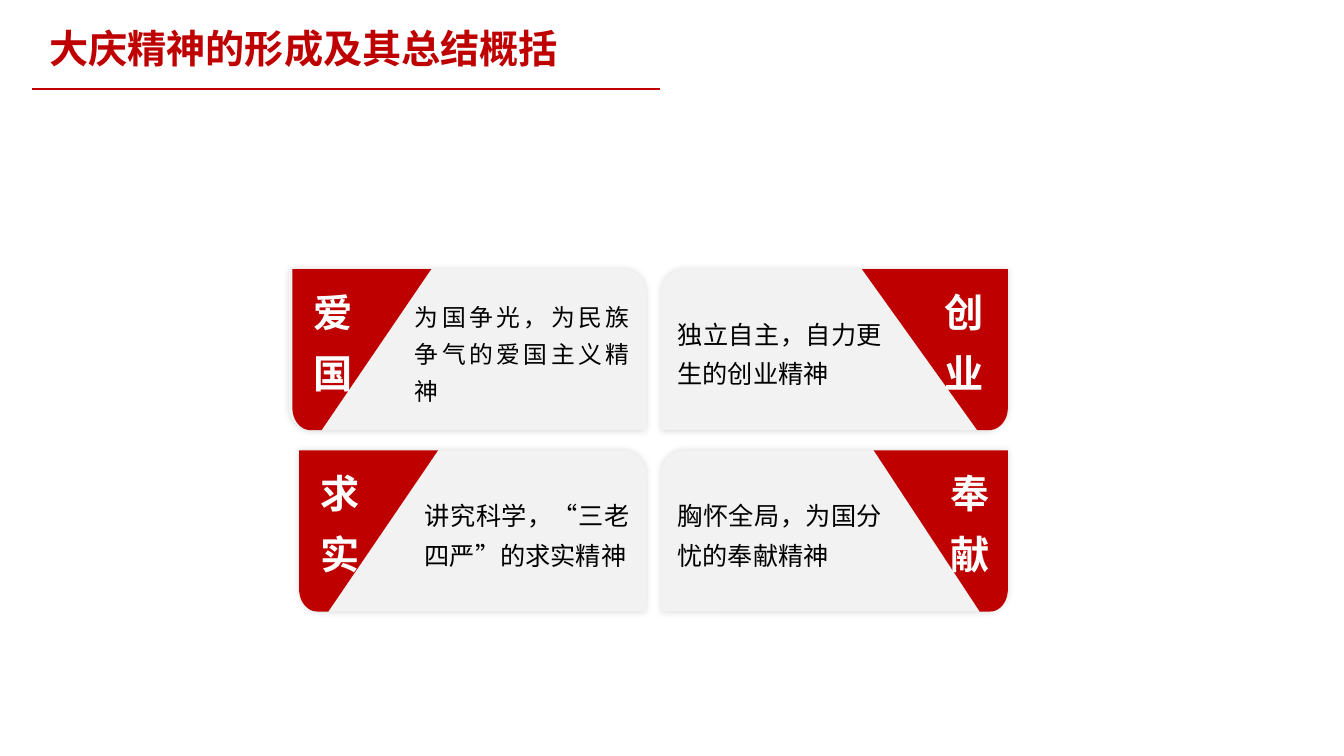
import math

from lxml import etree
from pptx import Presentation
from pptx import util as u
from pptx.dml.color import RGBColor
from pptx.enum import shapes, text
from pptx.oxml import ns

RED = RGBColor(0xBF, 0x00, 0x00)
GREY = RGBColor(0xF2, 0xF2, 0xF2)
WHITE = RGBColor(0xFF, 0xFF, 0xFF)
BLACK = RGBColor(0x00, 0x00, 0x00)
SHADOW = RGBColor(0x97, 0x9A, 0x9C)
FONT = "Noto Sans CJK SC"

ROW_TOPS = (6.78, 11.35)
CARD_HEIGHT = 4.06
LEFT_CARD_END, RIGHT_CARD_START, RIGHT_CARD_END = 16.28, 16.66, 25.4
SIDE_MARGIN, WIDE_CARD_MARGIN, WIDE_FLAG_MARGIN = 0.25, 3.0, 1.7


def add_xml(parent, tag, **attributes):
    return etree.SubElement(parent, ns.qn(tag), attributes)


def write_text(shape, words, size, color, bold=False, alignment=None,
               spacing=None, anchor=text.MSO_ANCHOR.TOP,
               left=SIDE_MARGIN, right=SIDE_MARGIN):
    frame = shape.text_frame
    frame.text = words
    frame.word_wrap = True
    frame.vertical_anchor = anchor
    frame.margin_left, frame.margin_right = u.Cm(left), u.Cm(right)
    frame.margin_top = frame.margin_bottom = u.Cm(0.13)
    paragraph = frame.paragraphs[0]
    paragraph.alignment = alignment
    paragraph.line_spacing = spacing
    run = paragraph.runs[0]
    run.font.name = FONT
    run.font.size = u.Pt(size)
    run.font.bold = bold
    run.font.color.rgb = color
    add_xml(run.font._element, "a:ea", typeface=FONT)


def fill_plain(shape, color):
    shape.shadow.inherit = False
    shape.fill.solid()
    shape.fill.fore_color.rgb = color
    shape.line.fill.background()


def add_soft_shadow(shape):
    effects = shape._element.spPr.find(ns.qn("a:effectLst"))
    shadow = add_xml(effects, "a:outerShdw", blurRad=str(u.Pt(5)),
                     dist="0", dir="0", algn="ctr", rotWithShape="0")
    color = add_xml(shadow, "a:srgbClr", val=str(SHADOW))
    add_xml(color, "a:alpha", val="40000")


def add_title(slide, words):
    title = slide.shapes.title
    title.left, title.top = u.Cm(0.99), u.Cm(0.48)
    title.width, title.height = u.Cm(13.41), u.Cm(1.45)
    write_text(title, words, 28, RED, bold=True,
               alignment=text.PP_ALIGN.LEFT)
    title.text_frame.word_wrap = False
    title.text_frame.auto_size = text.MSO_AUTO_SIZE.SHAPE_TO_FIT_TEXT


def add_title_rule(slide):
    rule = slide.shapes.add_connector(
        shapes.MSO_CONNECTOR.STRAIGHT,
        u.Cm(0.81), u.Cm(2.24), u.Cm(16.64), u.Cm(2.24))
    rule.line.color.rgb = RED
    rule.line.width = u.Pt(1.5)
    add_xml(rule._element.spPr, "a:effectLst")


def add_card(slide, start, end, top, words, size, on_left):
    card = slide.shapes.add_shape(
        shapes.MSO_SHAPE.ROUND_2_DIAG_RECTANGLE,
        u.Cm(start), u.Cm(top), u.Cm(end - start), u.Cm(CARD_HEIGHT))
    corners = (0, 0.14) if on_left else (0.14, 0)
    card.adjustments[0], card.adjustments[1] = corners
    fill_plain(card, GREY)
    add_soft_shadow(card)
    margins = (WIDE_CARD_MARGIN, SIDE_MARGIN)
    left, right = margins if on_left else margins[::-1]
    write_text(card, words, size, BLACK, spacing=1.3,
               alignment=text.PP_ALIGN.JUSTIFY,
               anchor=text.MSO_ANCHOR.MIDDLE, left=left, right=right)


def add_flag(slide, outer_edge, top, width, words, on_left):
    inward = 1 if on_left else -1
    radius_x, radius_y = 0.13 * width, 0.56
    outline = [(0, 0), (width, 0), (0.21 * width, CARD_HEIGHT)]
    for step in range(13):
        angle = math.pi / 2 * step / 12
        outline.append((radius_x * (1 - math.sin(angle)),
                        CARD_HEIGHT - radius_y * (1 - math.cos(angle))))
    points = [(u.Cm(outer_edge + inward * x), u.Cm(top + y))
              for x, y in outline]
    builder = slide.shapes.build_freeform(*points[0])
    builder.add_line_segments(points[1:], close=True)
    flag = builder.convert_to_shape()
    fill_plain(flag, RED)
    margins = (SIDE_MARGIN, WIDE_FLAG_MARGIN)
    left, right = margins if on_left else margins[::-1]
    write_text(flag, words, 28, WHITE, bold=True, spacing=1.3,
               alignment=text.PP_ALIGN.CENTER, left=left, right=right)


def main():
    presentation = Presentation()
    presentation.slide_width = u.Cm(33.87)
    presentation.slide_height = u.Cm(19.05)
    slide = presentation.slides.add_slide(presentation.slide_layouts[5])
    add_title(slide, "大庆精神的形成及其总结概括")
    add_title_rule(slide)

    left_column = (
        (7.29, 7.37, "爱国", "为国争光，为民族争气的爱国主义精神", 17),
        (7.54, 7.54, "求实", "讲究科学，“三老四严”的求实精神", 18),
    )
    right_column = (
        (3.68, "创业", "独立自主，自力更生的创业精神"),
        (3.38, "奉献", "胸怀全局，为国分忧的奉献精神"),
    )
    for top, left_item, right_item in zip(ROW_TOPS, left_column, right_column):
        start, flag_edge, name, meaning, size = left_item
        add_card(slide, start, LEFT_CARD_END, top, meaning, size, True)
        add_flag(slide, flag_edge, top, 3.5, name, True)
        flag_width, name, meaning = right_item
        add_card(slide, RIGHT_CARD_START, RIGHT_CARD_END, top, meaning, 18, False)
        add_flag(slide, RIGHT_CARD_END, top, flag_width, name, False)

    presentation.save("out.pptx")


if __name__ == "__main__":
    main()
